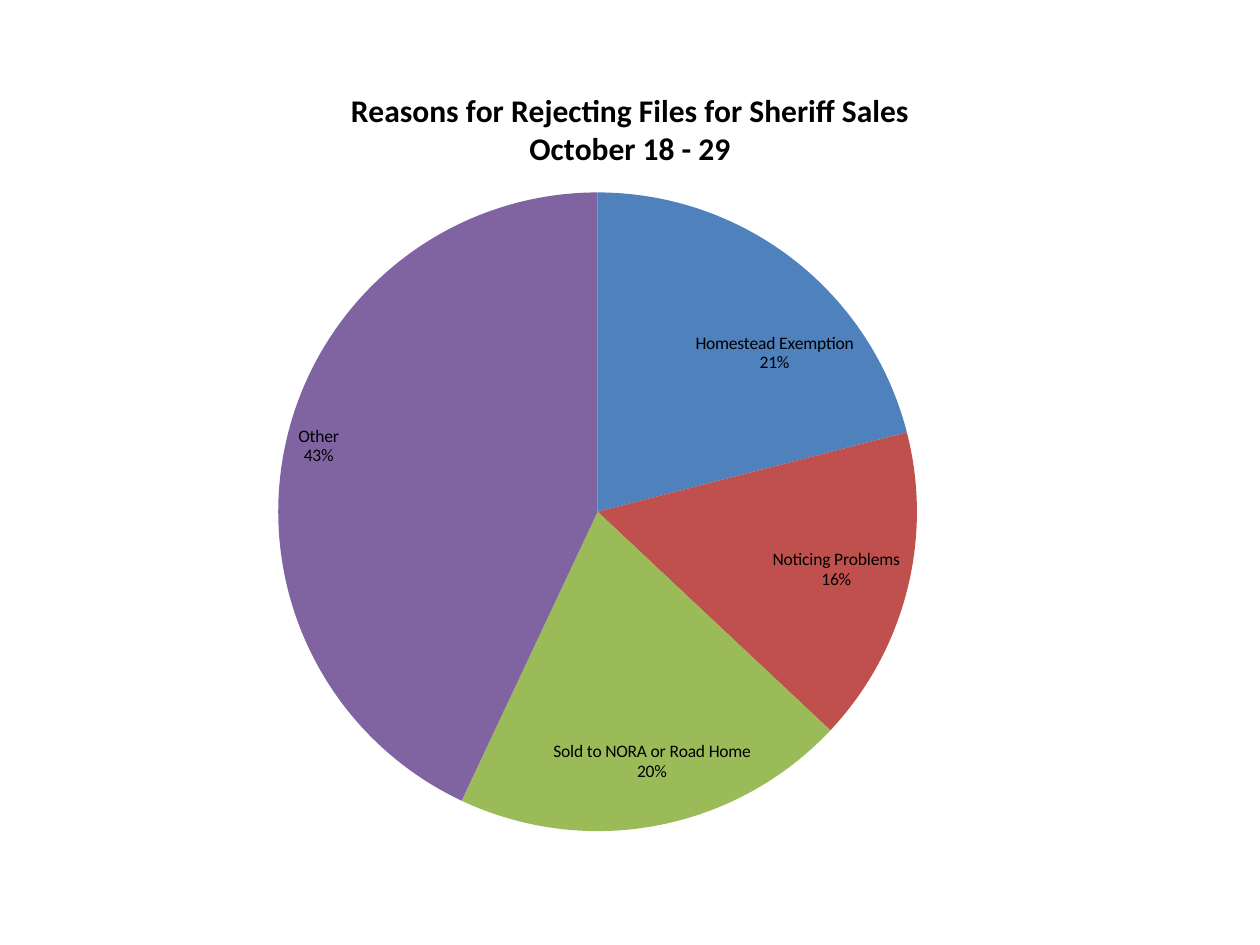
import pptx
import pptx.chart.data
import pptx.dml.color
import pptx.enum.chart
import pptx.oxml
import pptx.oxml.ns
import pptx.util

Pt = pptx.util.Pt

FONT = "Calibri"
TITLE_LINES = ["Reasons for Rejecting Files for Sheriff Sales", "October 18 - 29"]
REASONS = [
    ("Homestead Exemption", 21, "4F81BD", (37, 39)),
    ("Noticing Problems", 16, "C0504D", (0, 0)),
    ("Sold to NORA or Road Home", 20, "9BBB59", (54, -21)),
    ("Other", 43, "8064A2", (3, -10)),
]


def color(value):
    return pptx.dml.color.RGBColor.from_string(value)


def format_font(font, size, bold=False):
    font.name = FONT
    font.size = Pt(size)
    font.bold = bold
    font.color.rgb = color("000000")


def set_plot_layout(chart, left, top, width, height):
    plot_area = chart._chartSpace.chart.plotArea
    for layout in plot_area.findall(pptx.oxml.ns.qn("c:layout")):
        plot_area.remove(layout)
    plot_area.insert(0, pptx.oxml.parse_xml(
        f'<c:layout {pptx.oxml.ns.nsdecls("c")}><c:manualLayout>'
        '<c:layoutTarget val="inner"/><c:xMode val="edge"/><c:yMode val="edge"/>'
        f'<c:x val="{left}"/><c:y val="{top}"/><c:w val="{width}"/><c:h val="{height}"/>'
        '</c:manualLayout></c:layout>'))


def add_title(chart):
    chart.has_title = True
    chart.chart_title.include_in_layout = False
    text_frame = chart.chart_title.text_frame
    for index, line in enumerate(TITLE_LINES):
        paragraph = text_frame.add_paragraph() if index else text_frame.paragraphs[0]
        format_font(paragraph.font, 18, bold=True)
        run = paragraph.add_run()
        run.text = line
        format_font(run.font, 18, bold=True)


def add_labels(series, width, height):
    labels = series.data_labels
    format_font(labels.font, 10)
    labels.show_category_name = True
    labels.show_percentage = True
    labels.show_value = False
    labels.number_format = "0%"
    labels.number_format_is_linked = False
    labels.position = pptx.enum.chart.XL_LABEL_POSITION.INSIDE_END
    for index, (_, _, _, (right, down)) in enumerate(REASONS):
        labels._element.insert(index, pptx.oxml.parse_xml(
            f'<c:dLbl {pptx.oxml.ns.nsdecls("c")}><c:idx val="{index}"/>'
            f'<c:layout><c:manualLayout><c:x val="{right / width}"/>'
            f'<c:y val="{down / height}"/></c:manualLayout></c:layout>'
            '<c:dLblPos val="inEnd"/><c:showLegendKey val="0"/><c:showVal val="0"/>'
            '<c:showCatName val="1"/><c:showSerName val="0"/>'
            '<c:showPercent val="1"/><c:showBubbleSize val="0"/></c:dLbl>'))


def add_reasons_chart(slide, left, top, width, height):
    data = pptx.chart.data.CategoryChartData()
    data.categories = [name for name, _, _, _ in REASONS]
    data.add_series("Series 1", [share for _, share, _, _ in REASONS])
    chart = slide.shapes.add_chart(
        pptx.enum.chart.XL_CHART_TYPE.PIE,
        Pt(left), Pt(top), Pt(width), Pt(height), data).chart
    format_font(chart.font, 10)
    chart.has_legend = False
    add_title(chart)
    set_plot_layout(chart, 117 / width, 74 / height, 365 / width, 365 / height)

    plot = chart.plots[0]
    plot.vary_by_categories = True
    series = plot.series[0]
    for index, (_, _, fill, _) in enumerate(REASONS):
        point_format = series.points[index].format
        point_format.fill.solid()
        point_format.fill.fore_color.rgb = color(fill)
        point_format.line.fill.background()
    add_labels(series, width, height)


def main():
    presentation = pptx.Presentation()
    presentation.slide_width = Pt(720)
    presentation.slide_height = Pt(540)
    slide = presentation.slides.add_slide(presentation.slide_layouts[6])
    add_reasons_chart(slide, 42, 36, 636, 474)
    presentation.save("out.pptx")


if __name__ == "__main__":
    main()
